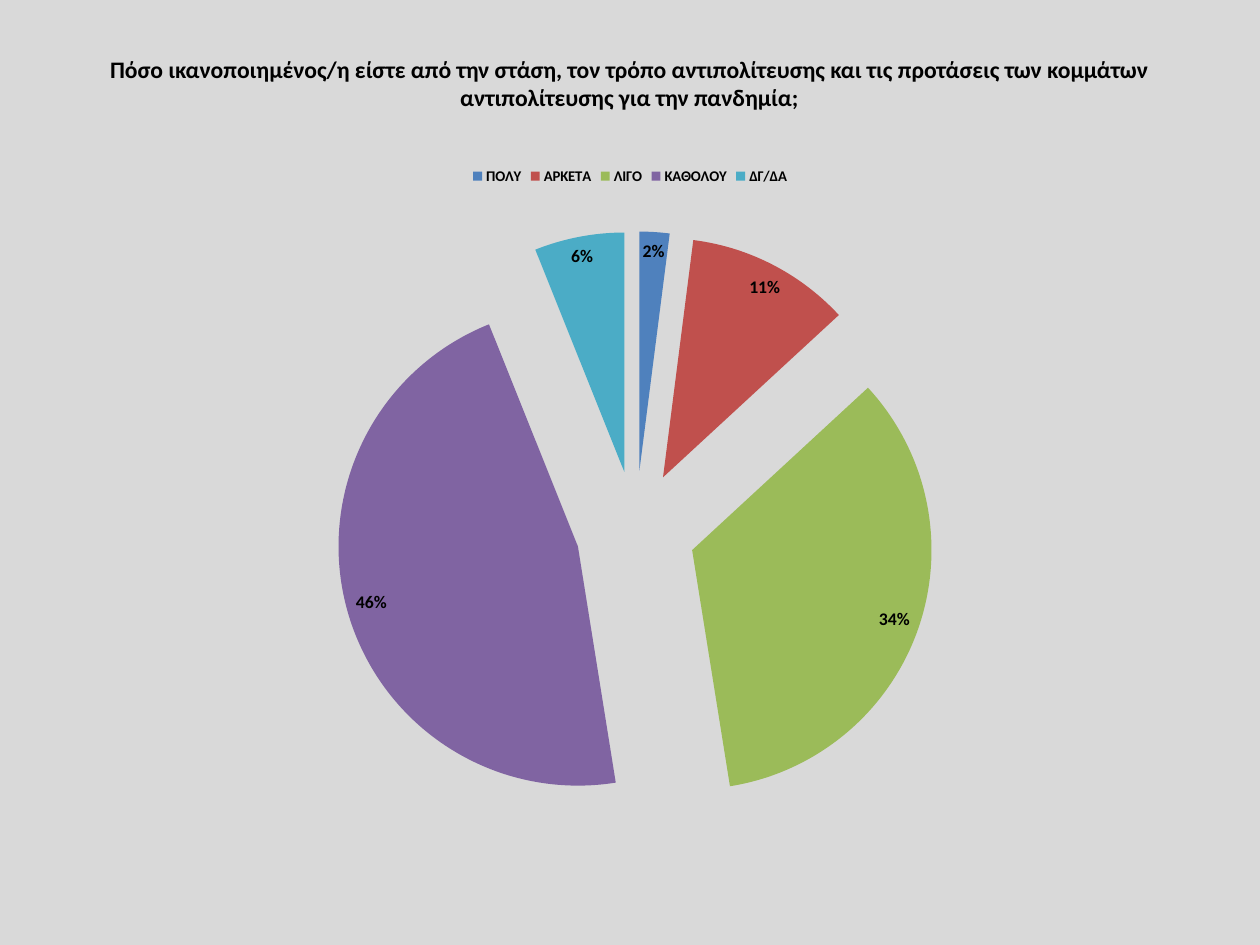
"""Build a slide with an exploded pie chart of survey answers."""
from lxml.etree import fromstring
from pptx import Presentation
from pptx.chart.data import CategoryChartData as Data
from pptx.dml.color import RGBColor
from pptx.enum.chart import XL_CHART_TYPE as Kind
from pptx.enum.chart import XL_LABEL_POSITION as Place
from pptx.enum.chart import XL_LEGEND_POSITION as Side
from pptx.enum.text import MSO_ANCHOR as Anchor
from pptx.enum.text import PP_ALIGN as Align
from pptx.oxml.ns import nsdecls, qn
from pptx.util import Inches, Pt


def paint(hue):
    return RGBColor.from_string(hue)


def style(font, size, name="Calibri", bold=True):
    font.name, font.size, font.bold = name, Pt(size), bold
    font.color.rgb = paint("000000")


ASK = ("Πόσο ικανοποιημένος/η είστε από την στάση, τον τρόπο αντιπολίτευσης "
       "και τις προτάσεις των κομμάτων αντιπολίτευσης για την πανδημία;")
VOTES = [
    ("ΠΟΛΥ", 2, "4F81BD"),
    ("ΑΡΚΕΤΑ", 11, "C0504D"),
    ("ΛΙΓΟ", 34, "9BBB59"),
    ("ΚΑΘΟΛΟΥ", 46, "8064A2"),
    ("ΔΓ/ΔΑ", 6, "4BACC6"),
]

deck = Presentation()
deck.slide_width, deck.slide_height = Inches(11.84), Inches(8.88)
slide = deck.slides.add_slide(deck.slide_layouts[6])
slide.background.fill.solid()
slide.background.fill.fore_color.rgb = paint("D9D9D9")

box = slide.shapes.add_textbox(Inches(0.81), Inches(0.47), Inches(10.21), Inches(0.62))
frame = box.text_frame
frame.word_wrap = True
frame.vertical_anchor = Anchor.MIDDLE
frame.margin_left = frame.margin_right = Inches(0.12)
frame.margin_top = frame.margin_bottom = Inches(0.06)
title = frame.paragraphs[0]
title.text = ASK
title.alignment = Align.CENTER
style(title.font, 16)

data = Data()
data.categories = [name for name, _, _ in VOTES]
data.add_series("Series 1", [count for _, count, _ in VOTES])
chart = slide.shapes.add_chart(
    Kind.PIE, Inches(0.59), Inches(1.46), Inches(10.66), Inches(6.47), data).chart
chart.has_title = False
style(chart.font, 10, "Arial", False)
chart.has_legend = True
chart.legend.position = Side.TOP
chart.legend.include_in_layout = False
style(chart.legend.font, 10)

plot = chart.plots[0]
plot.vary_by_categories = True
pie = plot.series[0]
for spot, (_, _, hue) in enumerate(VOTES):
    fill = pie.points[spot].format.fill
    fill.solid()
    fill.fore_color.rgb = paint(hue)

labels = pie.data_labels
labels.show_percentage = True
labels.show_value = False
labels.number_format = "0%"
labels.number_format_is_linked = False
labels.position = Place.BEST_FIT
style(labels.font, 12)

SPACE = nsdecls("c", "a")
pie._element.find(qn("c:tx")).addnext(fromstring(f'<c:explosion {SPACE} val="25"/>'))

root = chart._chartSpace.chart
root.addnext(fromstring(
    f'<c:spPr {SPACE}><a:noFill/><a:ln w="{Pt(0.75)}"><a:solidFill>'
    '<a:srgbClr val="D9D9D9"/></a:solidFill></a:ln></c:spPr>'))

area = root.plotArea
for old in area.findall(qn("c:layout")):
    area.remove(old)
sizes = "".join(f'<c:{key} val="{val}"/>' for key, val in
                [("x", 0.24), ("y", 0.11), ("w", 0.53), ("h", 0.87)])
area.insert(0, fromstring(
    f'<c:layout {SPACE}><c:manualLayout><c:layoutTarget val="inner"/>'
    f'<c:xMode val="edge"/><c:yMode val="edge"/>{sizes}</c:manualLayout></c:layout>'))

deck.save("out.pptx")
